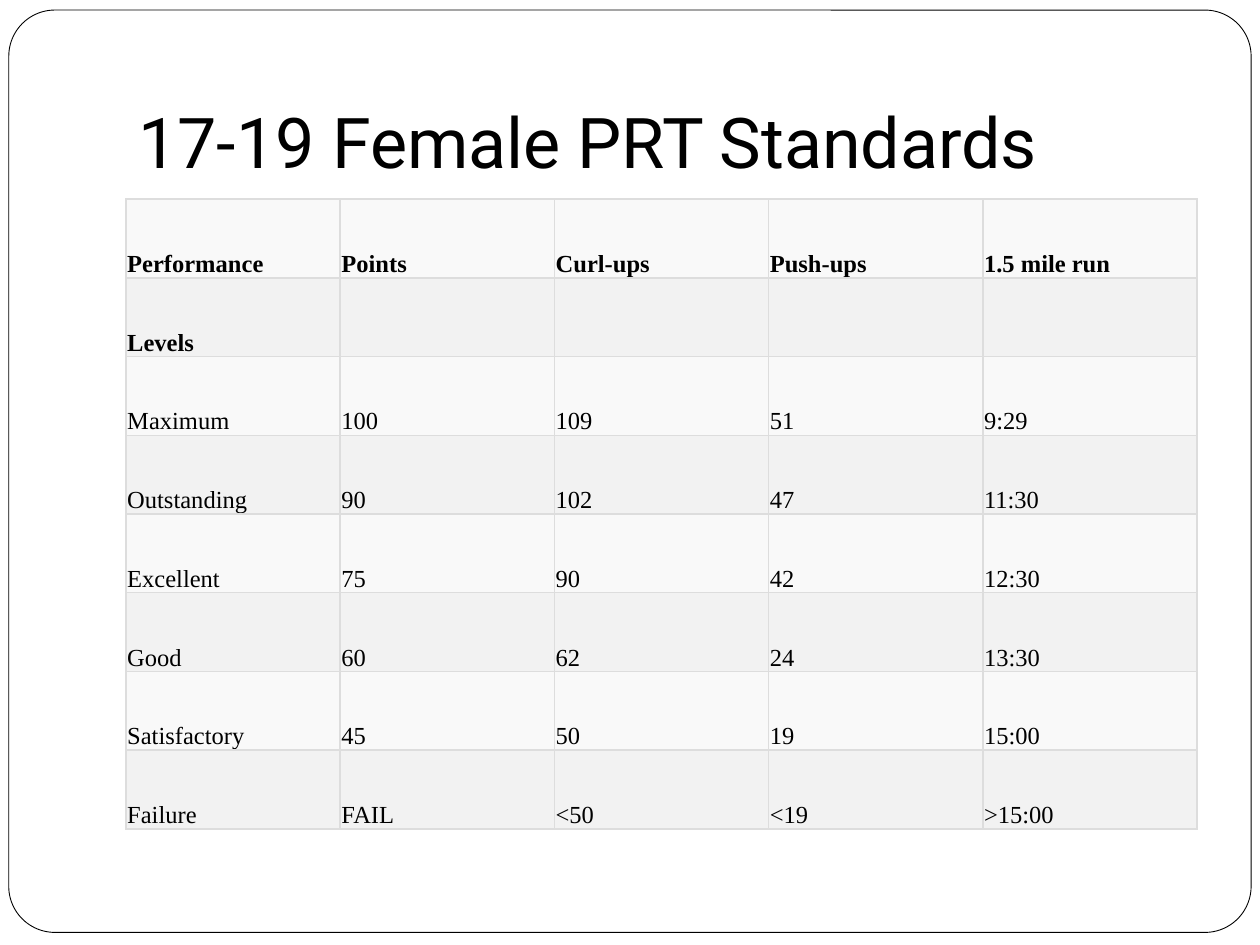
from dataclasses import dataclass

from lxml.etree import SubElement
from pptx import Presentation
from pptx.dml.color import RGBColor
from pptx.enum.shapes import MSO_SHAPE
from pptx.enum.text import MSO_ANCHOR
from pptx.oxml.ns import qn
from pptx.util import Inches, Pt


@dataclass(frozen=True)
class Theme:
    paper: str = "FFFFFF"
    ink: str = "000000"
    bands: tuple = ("F9F9F9", "F2F2F2")
    rule: str = "DDDDDD"
    title_font: str = "Roboto"
    table_font: str = "Times New Roman"
    title_size: int = 40
    table_size: int = 14
    frame_width: float = 0.5
    rule_width: int = 1


THEME = Theme()
HEADING_ROWS = 2
STANDARDS = [
    ("Performance", "Points", "Curl-ups", "Push-ups", "1.5 mile run"),
    ("Levels", "", "", "", ""),
    ("Maximum", "100", "109", "51", "9:29"),
    ("Outstanding", "90", "102", "47", "11:30"),
    ("Excellent", "75", "90", "42", "12:30"),
    ("Good", "60", "62", "24", "13:30"),
    ("Satisfactory", "45", "50", "19", "15:00"),
    ("Failure", "FAIL", "<50", "<19", ">15:00"),
]


def color(hex_code):
    return RGBColor.from_string(hex_code)


def write(text_frame, text, *, font, size, bold=False):
    run = text_frame.paragraphs[0].add_run()
    run.text = text
    run.font.name = font
    run.font.size = Pt(size)
    run.font.bold = bold
    run.font.color.rgb = color(THEME.ink)


def set_margins(holder, left, top, right, bottom):
    holder.margin_left, holder.margin_top = Inches(left), Inches(top)
    holder.margin_right, holder.margin_bottom = Inches(right), Inches(bottom)


def add_frame(slide):
    frame = slide.shapes.add_shape(
        MSO_SHAPE.ROUNDED_RECTANGLE,
        Inches(0.07), Inches(0.08), Inches(9.86), Inches(7.32))
    frame.adjustments[0] = 0.05
    frame.shadow.inherit = False
    frame.fill.solid()
    frame.fill.fore_color.rgb = color(THEME.paper)
    frame.line.color.rgb = color(THEME.ink)
    frame.line.width = Pt(THEME.frame_width)


def add_title(slide, text):
    title = slide.shapes.add_textbox(
        Inches(1), Inches(0.3), Inches(8.5), Inches(1.25)).text_frame
    title.word_wrap = True
    title.vertical_anchor = MSO_ANCHOR.BOTTOM
    set_margins(title, 0.1, 0.05, 0.1, 0.1)
    write(title, text, font=THEME.title_font, size=THEME.title_size)


def add_borders(cell):
    properties = cell._tc.get_or_add_tcPr()
    for side in ("lnL", "lnR", "lnT", "lnB"):
        border = SubElement(properties, qn(f"a:{side}"),
                            w=str(Pt(THEME.rule_width)))
        fill = SubElement(border, qn("a:solidFill"))
        SubElement(fill, qn("a:srgbClr"), val=THEME.rule)


def style_cell(cell, band):
    cell.vertical_anchor = MSO_ANCHOR.BOTTOM
    set_margins(cell, 0.01, 0.01, 0.01, 0)
    # Borders come before the fill in the cell properties
    add_borders(cell)
    cell.fill.solid()
    cell.fill.fore_color.rgb = color(band)


def add_standards_table(slide, rows):
    table = slide.shapes.add_table(
        len(rows), len(rows[0]),
        Inches(1), Inches(1.58), Inches(8.5), Inches(5)).table
    for row_index, row in enumerate(rows):
        band = THEME.bands[row_index % len(THEME.bands)]
        for column_index, text in enumerate(row):
            cell = table.cell(row_index, column_index)
            style_cell(cell, band)
            if text:
                write(cell.text_frame, text, font=THEME.table_font,
                      size=THEME.table_size, bold=row_index < HEADING_ROWS)


def main():
    deck = Presentation()
    deck.slide_width, deck.slide_height = Inches(10), Inches(7.5)
    slide = deck.slides.add_slide(deck.slide_layouts[6])

    # Page frame and heading
    add_frame(slide)
    add_title(slide, "17-19 Female PRT Standards")

    # Scores by performance level
    add_standards_table(slide, STANDARDS)

    deck.save("out.pptx")


if __name__ == "__main__":
    main()
